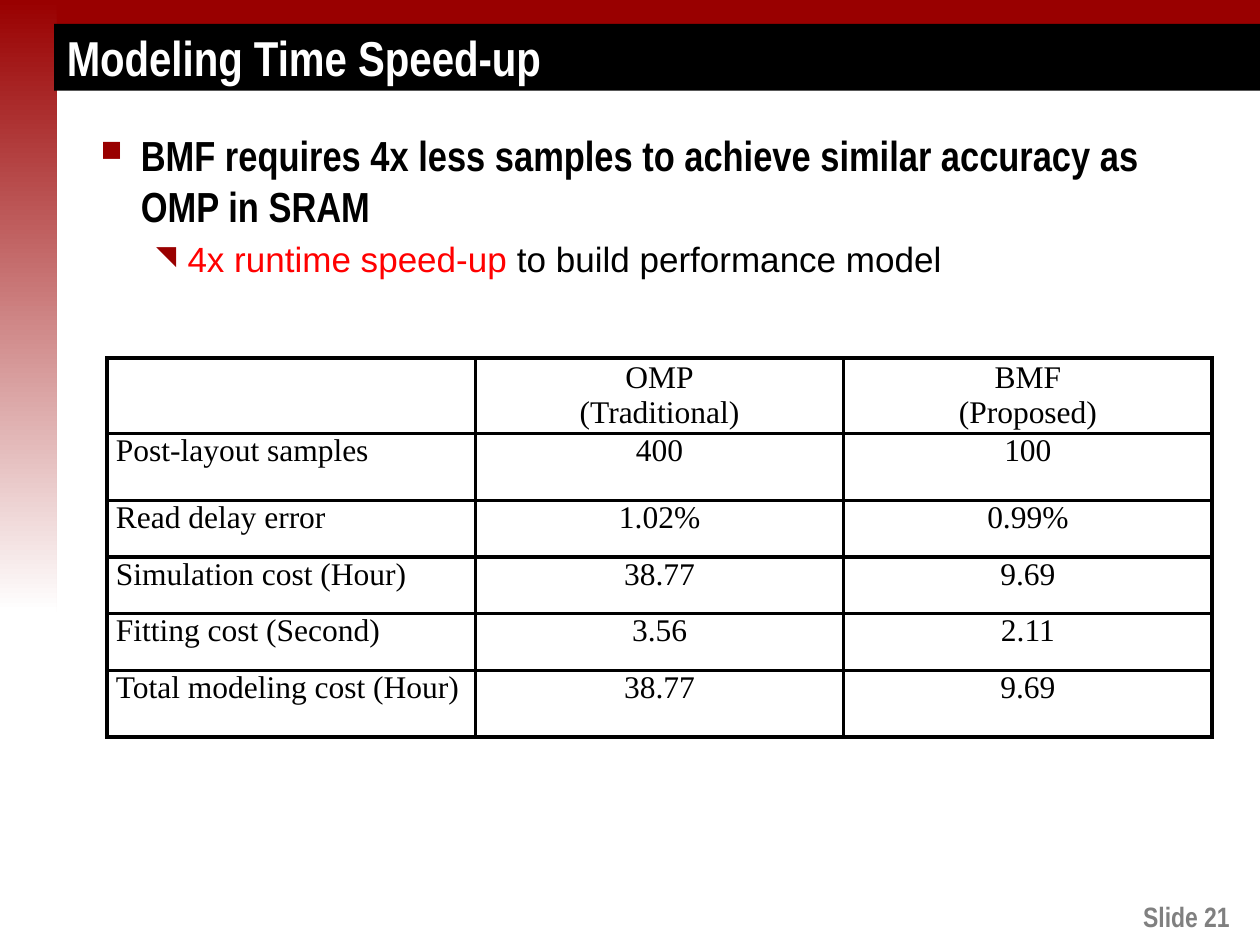
"""Build the slide on modeling time speed-up: title bar, bullets and a cost table."""
from dataclasses import dataclass

from lxml import etree
from pptx import Presentation, util as u
from pptx.dml.color import RGBColor
from pptx.enum import shapes, text
from pptx.oxml.ns import qn


@dataclass(frozen=True)
class Theme:
    brand: str = "990000"
    accent: str = "FF0000"
    ink: str = "000000"
    paper: str = "FFFFFF"
    muted: str = "808080"
    border: float = 2.25


THEME = Theme()
TITLE_FONT = {"name": "Arial Narrow", "size": 28, "bold": True, "color": THEME.paper}
LEAD_FONT = {"name": "Arial Narrow", "size": 24, "bold": True, "color": THEME.ink}
POINT_FONT = {"name": "Arial", "size": 20, "bold": False, "color": THEME.ink}
TABLE_FONT = {"name": "Times New Roman", "size": 18, "bold": False, "color": THEME.ink}
FOOTER_FONT = {"name": "Arial Narrow", "size": 16, "bold": True, "color": THEME.muted}

WIDTH, HEIGHT = 10, 7.5
TITLE = "Modeling Time Speed-up"
FOOTER = "Slide 21"
BULLETS = [
    {"level": 0, "mark": "■", "scale": 70, "margin": 0.32, "hang": 0.32, "before": 4.8,
     "spans": [("BMF requires 4x less samples to achieve similar accuracy as OMP in SRAM",
                LEAD_FONT)]},
    {"level": 1, "mark": "◥", "scale": 75, "margin": 0.69, "hang": 0.25, "before": 4,
     "spans": [("4x runtime speed-up ", {**POINT_FONT, "color": THEME.accent}),
               ("to build performance model", POINT_FONT)]},
]
ROWS = [
    ("", "OMP\n(Traditional)", "BMF\n(Proposed)"),
    ("Post-layout samples", "400", "100"),
    ("Read delay error", "1.02%", "0.99%"),
    ("Simulation cost (Hour)", "38.77", "9.69"),
    ("Fitting cost (Second)", "3.56", "2.11"),
    ("Total modeling cost (Hour)", "38.77", "9.69"),
]
ROW_HEIGHTS = [0.55, 0.53, 0.45, 0.45, 0.45, 0.53]
TABLE_LEFT, TABLE_TOP, TABLE_WIDTH = 0.85, 2.84, 8.77


def inches(*values):
    return [u.Inches(value) for value in values]


def rgb(color):
    return RGBColor.from_string(color)


def style(font, values):
    for name, value in values.items():
        if name == "color":
            font.color.rgb = rgb(value)
        else:
            setattr(font, name, u.Pt(value) if name == "size" else value)


def add_span(para, words, values):
    span = para.add_run()
    span.text = words
    style(span.font, values)


def set_indent(para, margin, hang):
    properties = para._p.get_or_add_pPr()
    properties.set("marL", str(u.Inches(margin)))
    properties.set("indent", str(-u.Inches(hang)))
    return properties


def add_bar(slide, *place):
    bar = slide.shapes.add_shape(shapes.MSO_SHAPE.RECTANGLE, *inches(*place))
    bar.shadow.inherit = False
    bar.line.fill.background()
    return bar


def add_frame(slide):
    top_bar = add_bar(slide, 0, 0, WIDTH, 0.25)
    top_bar.fill.solid()
    top_bar.fill.fore_color.rgb = rgb(THEME.brand)
    side_bar = add_bar(slide, 0, 0, 0.45, 4.86)
    side_bar.fill.gradient()
    side_bar.fill.gradient_angle = 270
    for stop, color in zip(side_bar.fill.gradient_stops, (THEME.brand, THEME.paper)):
        stop.color.rgb = rgb(color)
    return side_bar


def add_title(slide, below):
    title = slide.shapes.title
    below.element.addnext(title.element)
    title.left, title.top, title.width, title.height = inches(0.43, 0.19, WIDTH - 0.43, 0.53)
    title.fill.solid()
    title.fill.fore_color.rgb = rgb(THEME.ink)
    frame = title.text_frame
    frame.auto_size = text.MSO_AUTO_SIZE.NONE
    frame.vertical_anchor = text.MSO_ANCHOR.MIDDLE
    para = frame.paragraphs[0]
    para.alignment = text.PP_ALIGN.LEFT
    set_indent(para, 0.13, 0.13)
    add_span(para, TITLE, TITLE_FONT)


def add_bullets(slide):
    frame = slide.shapes.add_textbox(*inches(0.7, 0.98, 8.64, 6.05)).text_frame
    frame.word_wrap = True
    for index, bullet in enumerate(BULLETS):
        para = frame.add_paragraph() if index else frame.paragraphs[0]
        para.level = bullet["level"]
        para.space_before = u.Pt(bullet["before"])
        properties = set_indent(para, bullet["margin"], bullet["hang"])
        color = etree.SubElement(properties, qn("a:buClr"))
        etree.SubElement(color, qn("a:srgbClr"), val=THEME.brand)
        etree.SubElement(properties, qn("a:buSzPct"), val=str(bullet["scale"] * 1000))
        etree.SubElement(properties, qn("a:buChar"), char=bullet["mark"])
        for words, values in bullet["spans"]:
            add_span(para, words, values)


def set_borders(cell):
    properties = cell._tc.get_or_add_tcPr()
    for index, side in enumerate(("lnL", "lnR", "lnT", "lnB")):
        line = etree.Element(qn(f"a:{side}"), w=str(u.Pt(THEME.border)))
        fill = etree.SubElement(line, qn("a:solidFill"))
        etree.SubElement(fill, qn("a:srgbClr"), val=THEME.ink)
        properties.insert(index, line)


def fill_cell(cell, words, row, column):
    cell.fill.solid()
    cell.fill.fore_color.rgb = rgb(THEME.paper)
    cell.margin_left = cell.margin_right = u.Inches(0.07)
    cell.margin_top = cell.margin_bottom = 0
    cell.vertical_anchor = text.MSO_ANCHOR.TOP if row else text.MSO_ANCHOR.MIDDLE
    for index, words_line in enumerate(words.split("\n") if words else []):
        frame = cell.text_frame
        para = frame.add_paragraph() if index else frame.paragraphs[0]
        para.alignment = text.PP_ALIGN.CENTER if column else text.PP_ALIGN.JUSTIFY
        add_span(para, words_line, TABLE_FONT)
    set_borders(cell)


def add_costs(slide):
    place = inches(TABLE_LEFT, TABLE_TOP, TABLE_WIDTH, sum(ROW_HEIGHTS))
    table = slide.shapes.add_table(len(ROWS), len(ROWS[0]), *place).table
    table.first_row = table.horz_banding = False
    for column in table.columns:
        column.width = u.Inches(TABLE_WIDTH / len(ROWS[0]))
    for row, (height, values) in enumerate(zip(ROW_HEIGHTS, ROWS)):
        table.rows[row].height = u.Inches(height)
        for column, words in enumerate(values):
            fill_cell(table.cell(row, column), words, row, column)


def add_footer(slide):
    frame = slide.shapes.add_textbox(*inches(0.7, 7.09, 9.26, 0.37)).text_frame
    frame.word_wrap = True
    frame.margin_right = u.Inches(0.2)
    para = frame.paragraphs[0]
    para.alignment = text.PP_ALIGN.RIGHT
    add_span(para, FOOTER, FOOTER_FONT)


def main():
    deck = Presentation()
    deck.slide_width, deck.slide_height = inches(WIDTH, HEIGHT)
    page = deck.slides.add_slide(deck.slide_layouts[5])
    add_title(page, add_frame(page))
    add_bullets(page)
    add_costs(page)
    add_footer(page)
    deck.save("out.pptx")


if __name__ == "__main__":
    main()
